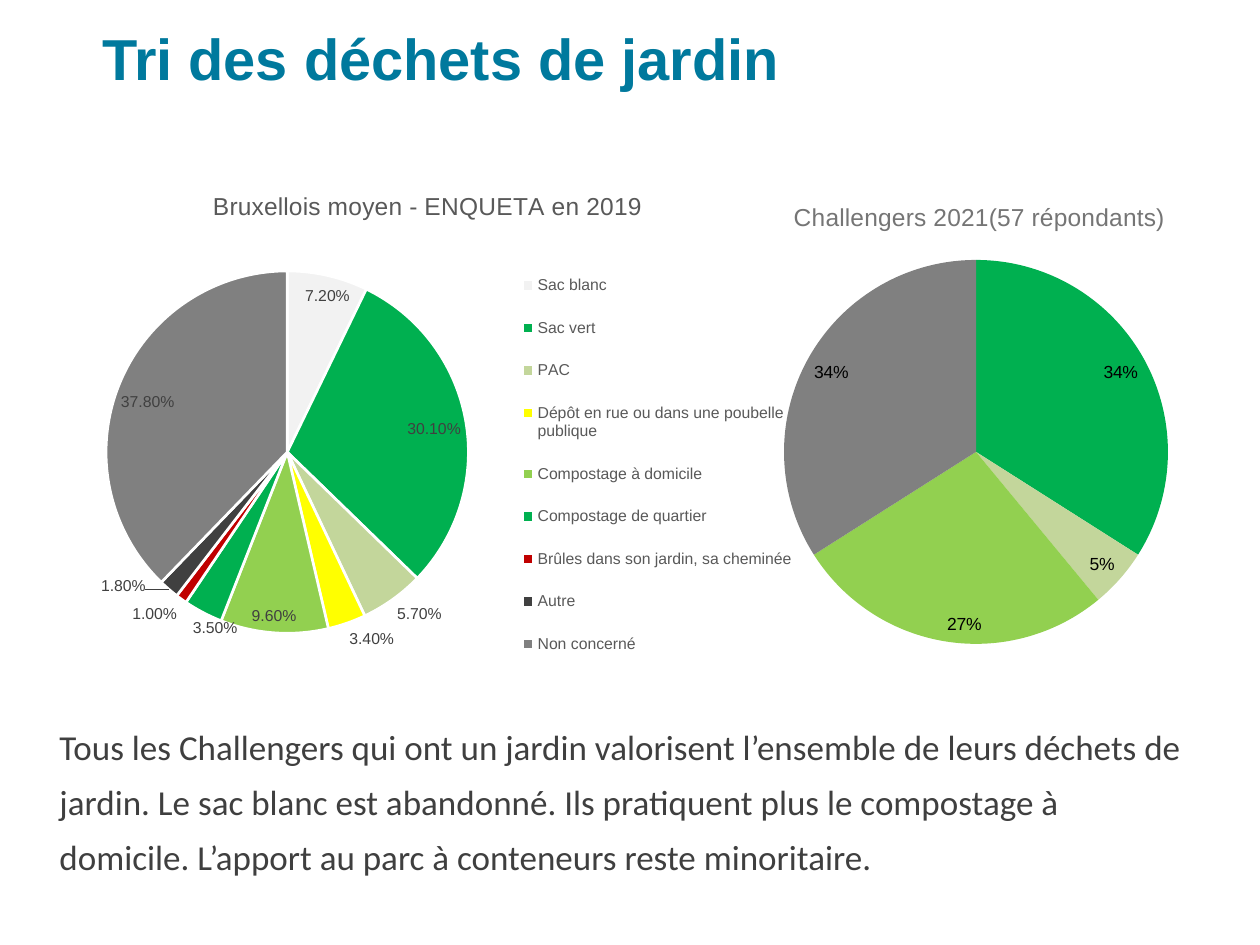
"""Build the slide on sorting garden waste, with two pie charts."""
import pptx
import pptx.chart.data
import pptx.dml.color
import pptx.enum.chart
import pptx.oxml
import pptx.oxml.ns
import pptx.util

Cm, Pt = pptx.util.Cm, pptx.util.Pt
ENUM = pptx.enum.chart

HUES = {
    "title": "00799D", "body": "3F3F3F", "black": "000000", "white": "FFFFFF",
    "pale": "F2F2F2", "green": "00B050", "sage": "C3D69B", "yellow": "FFFF00",
    "lime": "92D050", "red": "C00000", "dark": "404040", "gray": "808080",
    "head": "595959", "soft": "757575",
}

TEXTS = [
    dict(text="Tri des déchets de jardin", box=(1.88, 0.28, 23.82, 3.4),
         font=("Arial", 33, "title", True), space=1.0),
    dict(text="Tous les Challengers qui ont un jardin valorisent l’ensemble de leurs "
              "déchets de jardin. Le sac blanc est abandonné. Ils pratiquent plus le "
              "compostage à domicile. L’apport au parc à conteneurs reste minoritaire.",
         box=(1.02, 14.2, 23.19, 3.6), font=("Calibri", 20, "body", False), space=1.3),
]

PIES = [
    dict(title="Challengers 2021(57 répondants)", hue="soft",
         box=(14.55, 3.68, 10.46, 9.7), head=(0.13, 0.03), plot=(0.12, 0.16, 0.74, 0.8),
         rows=[("1", 34, "green"), ("2", 5, "sage"), ("3", 27, "lime"), ("4", 0, "green"),
               ("5", 0, "red"), ("6", 0, "gray"), ("7", 34, "gray")],
         share=True, form="0%;;", spot=ENUM.XL_LABEL_POSITION.INSIDE_END,
         label=(10, "black"), edge=None, legend=None),
    dict(title="Bruxellois moyen - ENQUETA en 2019", hue="head",
         box=(0.71, 3.45, 15.88, 10.21), head=(0.22, 0.03), plot=(0.09, 0.19, 0.46, 0.73),
         rows=[("Sac blanc", 0.072, "pale"), ("Sac vert", 0.301, "green"),
               ("PAC", 0.057, "sage"),
               ("Dépôt en rue ou dans une poubelle publique", 0.034, "yellow"),
               ("Compostage à domicile", 0.096, "lime"),
               ("Compostage de quartier", 0.035, "green"),
               ("Brûles dans son jardin, sa cheminée", 0.01, "red"),
               ("Autre", 0.018, "dark"), ("Non concerné", 0.378, "gray")],
         share=False, form="0.00%", spot=ENUM.XL_LABEL_POSITION.BEST_FIT,
         label=(9, "dark"), edge="white", legend=(0.61, 0.16, 0.36, 0.85)),
]


def tint(name):
    return pptx.dml.color.RGBColor.from_string(HUES[name])


def style(font, face, size, hue, bold=False):
    font.name, font.size, font.bold = face, Pt(size), bold
    font.color.rgb = tint(hue)


def place(node, index, spots, inner=False):
    for old in node.findall(pptx.oxml.ns.qn("c:layout")):
        node.remove(old)
    parts = '<c:layoutTarget val="inner"/>' if inner else ""
    parts += '<c:xMode val="edge"/><c:yMode val="edge"/>'
    parts += "".join(f'<c:{key} val="{val}"/>' for key, val in zip("xywh", spots))
    node.insert(index, pptx.oxml.parse_xml(
        f'<c:layout {pptx.oxml.ns.nsdecls("c")}>'
        f"<c:manualLayout>{parts}</c:manualLayout></c:layout>"))


def add_text(slide, item):
    frame = slide.shapes.add_textbox(*map(Cm, item["box"])).text_frame
    frame.word_wrap = True
    frame.margin_left = frame.margin_right = Cm(0.18)
    frame.margin_top = frame.margin_bottom = Cm(0.18)
    para = frame.paragraphs[0]
    para.text, para.line_spacing = item["text"], item["space"]
    style(para.font, *item["font"])


def add_pie(slide, item):
    names, vals, hues = zip(*item["rows"])
    data = pptx.chart.data.CategoryChartData()
    data.categories = names
    data.add_series("Series 1", vals)
    chart = slide.shapes.add_chart(
        ENUM.XL_CHART_TYPE.PIE, *map(Cm, item["box"]), data).chart
    style(chart.font, "Arial", 10, "black")
    head = chart.chart_title.text_frame
    head.text = item["title"]
    style(head.paragraphs[0].font, "Arial", 14, item["hue"])
    title = chart.chart_title._element
    place(title, 1, item["head"])
    plot = chart.plots[0]
    place(plot._element.getparent(), 0, item["plot"], True)

    plot.vary_by_categories = True
    for num, hue in enumerate(hues):
        form = plot.series[0].points[num].format
        form.fill.solid()
        form.fill.fore_color.rgb = tint(hue)
        if item["edge"]:
            form.line.color.rgb = tint(item["edge"])
            form.line.width = Pt(1.5)
        else:
            form.line.fill.background()

    labels = plot.series[0].data_labels
    labels.show_percentage, labels.show_value = item["share"], not item["share"]
    labels.number_format, labels.number_format_is_linked = item["form"], False
    labels.position = item["spot"]
    style(labels.font, "Arial", *item["label"])

    chart.has_legend = bool(item["legend"])
    if item["legend"]:
        chart.legend.position = ENUM.XL_LEGEND_POSITION.RIGHT
        chart.legend.include_in_layout = False
        style(chart.legend.font, "Arial", 9, "head")
        place(chart.legend._element, 1, item["legend"])


def main():
    deck = pptx.Presentation()
    deck.slide_width, deck.slide_height = Cm(25.4), Cm(19.05)
    slide = deck.slides.add_slide(deck.slide_layouts[6])
    for item in TEXTS:
        add_text(slide, item)
    for item in PIES:
        add_pie(slide, item)
    deck.save("out.pptx")


if __name__ == "__main__":
    main()
